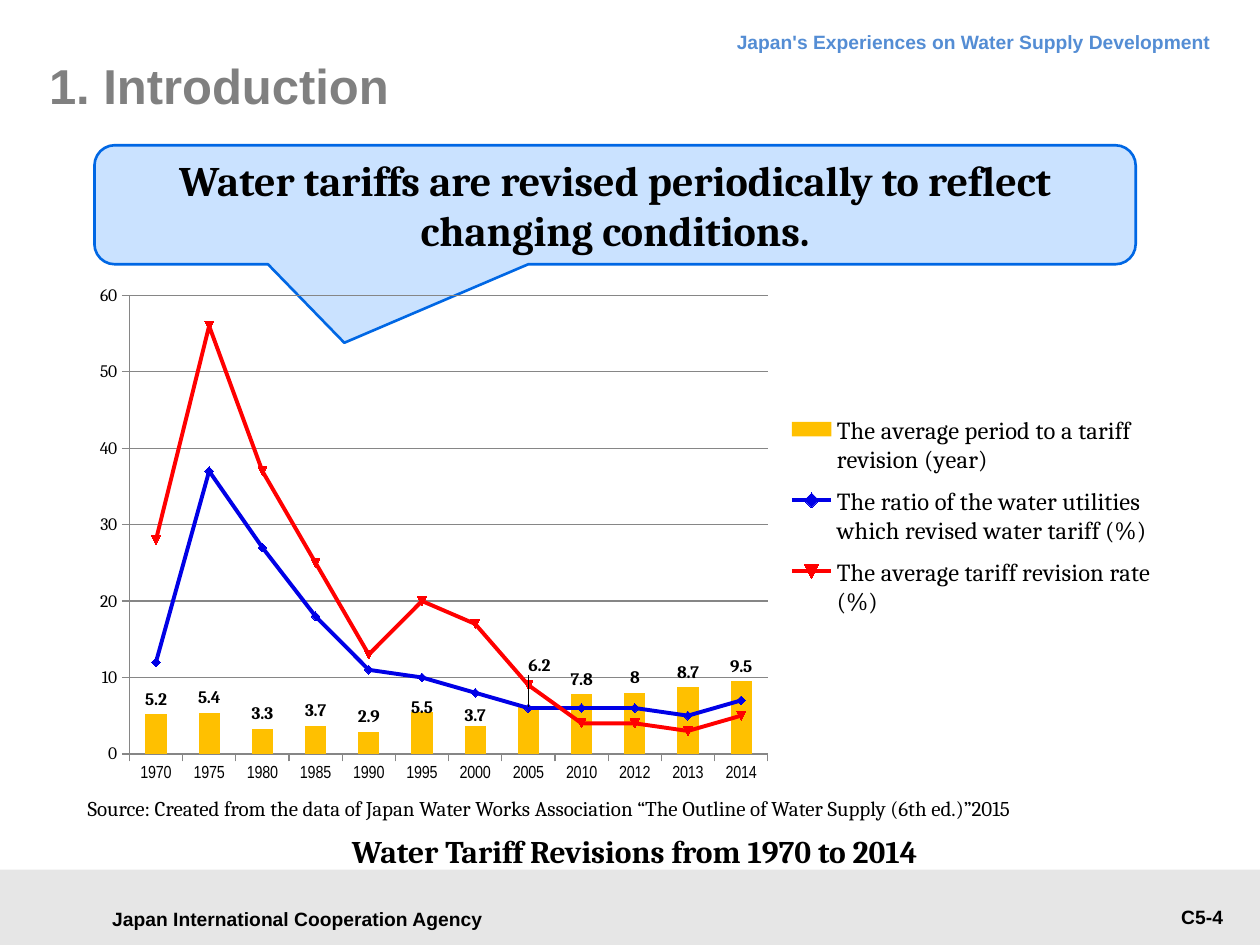
from dataclasses import dataclass

import pptx
import pptx.chart.data
import pptx.dml.color
import pptx.enum.chart
import pptx.enum.shapes
import pptx.enum.text
import pptx.oxml
import pptx.oxml.ns
import pptx.util

Pt = pptx.util.Pt
qn = pptx.oxml.ns.qn
ALIGN = pptx.enum.text.PP_ALIGN
ANCHOR = pptx.enum.text.MSO_ANCHOR
CHART = pptx.enum.chart


@dataclass(frozen=True)
class Theme:
    sans: str = "Arial"
    narrow: str = "Arial Narrow"
    serif: str = "Cambria"
    black: str = "000000"
    title: str = "808080"
    header: str = "548DD4"
    band: str = "E6E6E6"
    callout: str = "CAE2FF"
    callout_line: str = "0067E4"
    period: str = "FFC000"
    ratio: str = "0000E6"
    rate: str = "FF0000"
    axis: str = "868686"
    chart_size: int = 10
    small_size: int = 11
    source_size: int = 12
    legend_size: int = 14
    caption_size: int = 18
    callout_size: int = 24
    title_size: int = 28


THEME = Theme()
YEARS = ["1970", "1975", "1980", "1985", "1990", "1995",
         "2000", "2005", "2010", "2012", "2013", "2014"]
SERIES = {
    "The average period to a tariff revision (year)":
        [5.2, 5.4, 3.3, 3.7, 2.9, 5.5, 3.7, 6.2, 7.8, 8, 8.7, 9.5],
    "The ratio of the water utilities which revised water tariff (%)":
        [12, 37, 27, 18, 11, 10, 8, 6, 6, 6, 5, 7],
    "The average tariff revision rate (%)":
        [28, 56, 37, 25, 13, 20, 17, 9, 4, 4, 3, 5],
}
LABEL_SHIFTS = {5: (0, 0.02), 6: (0, 0.01), 7: (0.01, -0.05)}


def rgb(value):
    return pptx.dml.color.RGBColor.from_string(value)


def style_font(font, size, name=THEME.serif, color=THEME.black, bold=False):
    for attribute, value in dict(size=Pt(size), name=name, bold=bold).items():
        setattr(font, attribute, value)
    font.color.rgb = rgb(color)


def write(shape, text, size, align=ALIGN.LEFT, anchor=ANCHOR.TOP, wrap=True,
          line_spacing=None, **font):
    frame = shape.text_frame
    for attribute, value in dict(word_wrap=wrap, vertical_anchor=anchor).items():
        setattr(frame, attribute, value)
    paragraph = frame.paragraphs[0]
    paragraph.text = text
    for attribute, value in dict(alignment=align, line_spacing=line_spacing).items():
        setattr(paragraph, attribute, value)
    style_font(paragraph.runs[0].font, size, **font)


def add_text(slide, box, text, size, inset=None, **style):
    shape = slide.shapes.add_textbox(*map(Pt, box))
    if inset is not None:
        for side in ("left", "top", "right", "bottom"):
            setattr(shape.text_frame, f"margin_{side}", Pt(inset))
    write(shape, text, size, **style)


def add_panel(slide, kind, box, fill, line=None):
    shape = slide.shapes.add_shape(kind, *map(Pt, box))
    shape.shadow.inherit = False
    shape.fill.solid()
    shape.fill.fore_color.rgb = rgb(fill)
    if line:
        shape.line.color.rgb = rgb(line)
        shape.line.width = Pt(1.5)
    else:
        shape.line.fill.background()
    return shape


def add_heading(slide, box):
    left, top, width, height = box
    bold_sans = dict(name=THEME.sans, bold=True)
    add_text(slide, (left + 168, top, width - 168, 27),
             "Japan's Experiences on Water Supply Development", THEME.small_size,
             align=ALIGN.RIGHT, line_spacing=Pt(18), color=THEME.header, **bold_sans)
    add_text(slide, (left, top + 11, 647, height - 11), "1. Introduction",
             THEME.title_size, inset=0, anchor=ANCHOR.MIDDLE,
             color=THEME.title, **bold_sans)


def add_footer(slide, box):
    left, top, width, height = box
    add_panel(slide, pptx.enum.shapes.MSO_SHAPE.RECTANGLE, box, THEME.band)
    bold_sans = dict(name=THEME.sans, bold=True)
    add_text(slide, (left + 51, top + 16, 238, 24),
             "Japan International Cooperation Agency", THEME.small_size,
             align=ALIGN.CENTER, anchor=ANCHOR.MIDDLE, **bold_sans)
    add_text(slide, (left + width - 127, top + 17, 113, 21), "C5-4",
             THEME.small_size, align=ALIGN.RIGHT, **bold_sans)


def add_callout(slide, box):
    kind = pptx.enum.shapes.MSO_SHAPE.ROUNDED_RECTANGULAR_CALLOUT
    callout = add_panel(slide, kind, box, THEME.callout, THEME.callout_line)
    for index, value in enumerate((-0.26, 1.16, 0.17)):
        callout.adjustments[index] = value
    write(callout, "Water tariffs are revised periodically to reflect changing conditions.",
          THEME.callout_size, align=ALIGN.CENTER, anchor=ANCHOR.MIDDLE, bold=True)


def chart_xml(tag, content="", attributes=""):
    return pptx.oxml.parse_xml(
        f'<c:{tag} xmlns:c="http://schemas.openxmlformats.org/drawingml/2006/chart" '
        f'xmlns:a="http://schemas.openxmlformats.org/drawingml/2006/main" {attributes}>'
        f'{content}</c:{tag}>')


def manual_layout(x, y, width=None, height=None, inner=False):
    parts = '<c:layoutTarget val="inner"/>' if inner else ""
    if width:
        parts += '<c:xMode val="edge"/><c:yMode val="edge"/>'
    values = dict(x=x, y=y, w=width, h=height)
    parts += "".join(f'<c:{tag} val="{value}"/>'
                     for tag, value in values.items() if value is not None)
    return chart_xml("layout", f"<c:manualLayout>{parts}</c:manualLayout>")


def replace_layout(parent, position, layout):
    for old in parent.findall(qn("c:layout")):
        parent.remove(old)
    parent.insert(position, layout)


def move_to_line_plot(chart):
    bars = chart.plots[0]._element
    lines = chart_xml("lineChart", '<c:grouping val="standard"/><c:varyColors val="0"/>')
    for series in bars.findall(qn("c:ser"))[1:]:
        for flag in series.findall(qn("c:invertIfNegative")):
            series.remove(flag)
        lines.append(series)
    lines.append(chart_xml("marker", attributes='val="1"'))
    for axis in bars.findall(qn("c:axId")):
        lines.append(chart_xml("axId", attributes=f'val="{axis.get("val")}"'))
    bars.addnext(lines)


def style_bars(plot):
    plot.gap_width = 150
    plot.vary_by_categories = False
    series = plot.series[0]
    series.format.fill.solid()
    series.format.fill.fore_color.rgb = rgb(THEME.period)
    outside = CHART.XL_LABEL_POSITION.OUTSIDE_END
    labels = series.data_labels
    for attribute, value in dict(show_value=True, position=outside).items():
        setattr(labels, attribute, value)
    style_font(labels.font, THEME.chart_size, bold=True)
    for index, shift in LABEL_SHIFTS.items():
        label = series.points[index].data_label
        style_font(label.font, THEME.chart_size, bold=True)
        label.position = outside
        entry = next(item for item in labels._element.findall(qn("c:dLbl"))
                     if item.find(qn("c:idx")).get("val") == str(index))
        replace_layout(entry, 1, manual_layout(*shift))


def style_lines(plot):
    for series, color in zip(plot.series, (THEME.ratio, THEME.rate)):
        series.smooth = False
        series.format.line.width = Pt(2.25)
        series.marker.style = CHART.XL_MARKER_STYLE.AUTOMATIC
        series.marker.size = 5
        series.marker.format.fill.solid()
        series.marker.format.fill.fore_color.rgb = rgb(color)
        for line in (series.format.line, series.marker.format.line):
            line.color.rgb = rgb(color)


def style_axes(chart):
    for axis, name in ((chart.category_axis, THEME.narrow), (chart.value_axis, THEME.serif)):
        axis.major_tick_mark = CHART.XL_TICK_MARK.OUTSIDE
        axis.format.line.color.rgb = rgb(THEME.axis)
        style_font(axis.tick_labels.font, THEME.chart_size, name=name)
    for attribute, value in dict(minimum_scale=0, maximum_scale=60, major_unit=10,
                                 has_major_gridlines=True).items():
        setattr(chart.value_axis, attribute, value)
    chart.value_axis.major_gridlines.format.line.color.rgb = rgb(THEME.axis)


def add_tariff_chart(slide, box):
    data = pptx.chart.data.CategoryChartData()
    data.categories = YEARS
    for name, values in SERIES.items():
        data.add_series(name, values)
    chart = slide.shapes.add_chart(
        CHART.XL_CHART_TYPE.COLUMN_CLUSTERED, *map(Pt, box), data).chart
    style_font(chart.font, THEME.chart_size)
    for attribute, value in dict(has_title=False, has_legend=True).items():
        setattr(chart, attribute, value)
    move_to_line_plot(chart)
    style_bars(chart.plots[0])
    style_lines(chart.plots[1])
    style_axes(chart)
    legend = chart.legend
    legend.position = CHART.XL_LEGEND_POSITION.RIGHT
    legend.include_in_layout = False
    style_font(legend.font, THEME.legend_size)
    replace_layout(legend._element, 1, manual_layout(0.64, 0.25, 0.35, 0.44))
    body = chart._chartSpace.find(qn("c:chart"))
    replace_layout(body.find(qn("c:plotArea")), 0,
                   manual_layout(0.05, 0.04, 0.58, 0.89, inner=True))
    body.addnext(chart_xml("spPr", "<a:noFill/><a:ln><a:noFill/></a:ln>"))


def add_notes_below(slide, box):
    left, top, width, height = box
    add_text(slide, (left, top, width, 22),
             "Source: Created from the data of Japan Water Works Association "
             "“The Outline of Water Supply (6th ed.)”2015", THEME.source_size)
    add_text(slide, (left + 151, top + height - 29, 358, 29),
             "Water Tariff Revisions from 1970 to 2014", THEME.caption_size,
             wrap=False, bold=True)


def main():
    presentation = pptx.Presentation()
    presentation.slide_width, presentation.slide_height = Pt(720), Pt(540)
    slide = presentation.slides.add_slide(presentation.slide_layouts[6])
    add_footer(slide, (0, 497, 720, 43))
    add_heading(slide, (28, 9, 671, 68))
    add_callout(slide, (54, 83, 595, 68))
    add_tariff_chart(slide, (42.5, 157, 629, 294.5))
    add_notes_below(slide, (43, 451, 660, 50))
    presentation.save("out.pptx")


if __name__ == "__main__":
    main()
